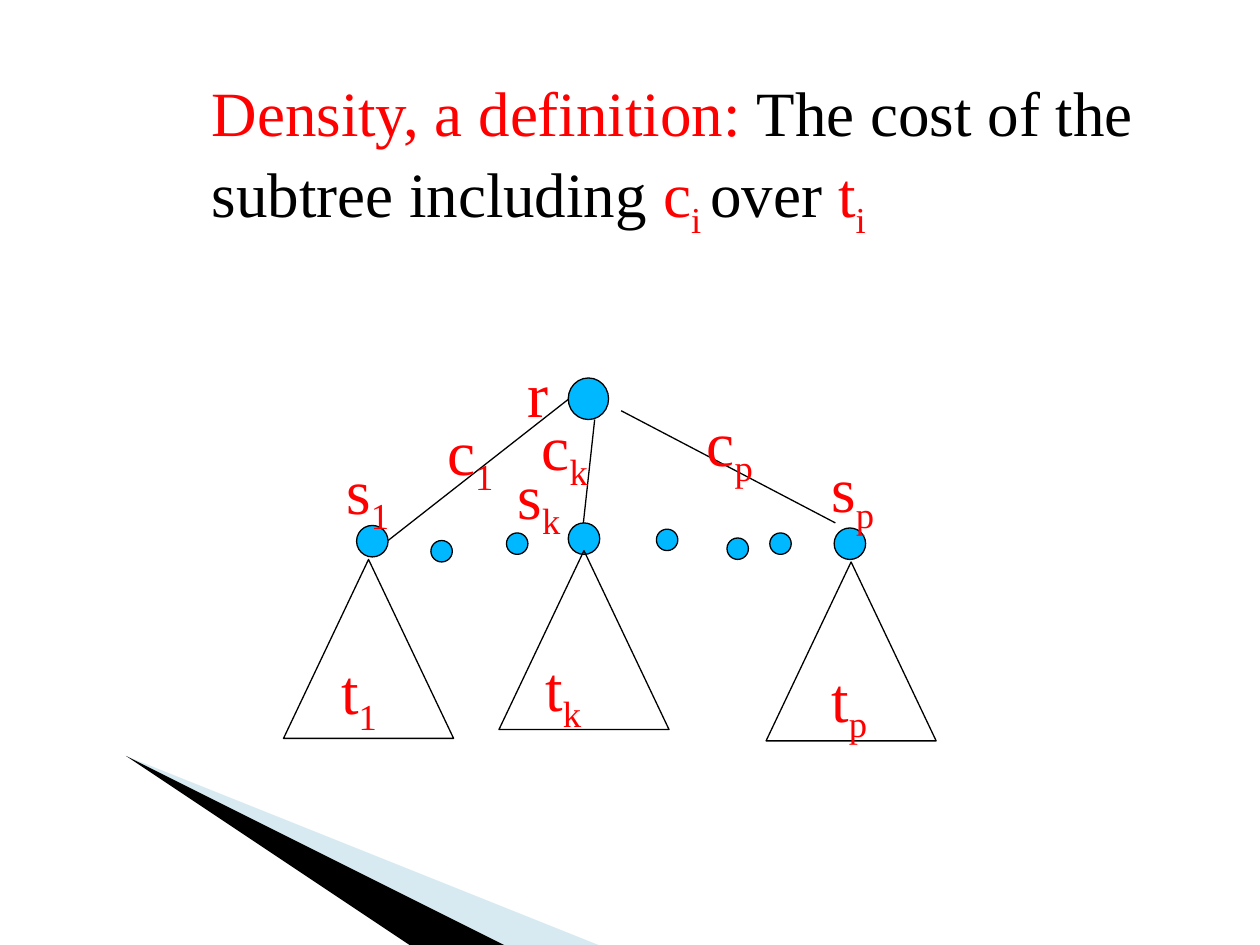
import pptx
import pptx.dml.color
import pptx.enum.shapes
import pptx.enum.text
import pptx.oxml
import pptx.oxml.ns
import pptx.util
from pptx.util import Inches

FONT = "Times New Roman"
RED, BLACK, BLUE, PALE = "FF0000", "000000", "00B8FF", "9FCBDC"
SHAPES = pptx.enum.shapes.MSO_SHAPE


def color(hex_string):
    """Return an RGB colour."""
    return pptx.dml.color.RGBColor.from_string(hex_string)


def style_line(line):
    """Give a line the thin black style of the diagram."""
    line.color.rgb = color(BLACK)
    line.width = pptx.util.Pt(0.75)


def write_runs(tf, runs):
    """Write (text, colour, is_subscript) runs into a text frame."""
    tf.word_wrap = True
    tf.auto_size = pptx.enum.text.MSO_AUTO_SIZE.NONE
    tf.vertical_anchor = pptx.enum.text.MSO_ANCHOR.TOP
    p = tf.paragraphs[0]
    p.alignment = pptx.enum.text.PP_ALIGN.LEFT
    p.line_spacing = 1.06
    for text, hex_string, is_subscript in runs:
        r = p.add_run()
        r.text = text
        r.font.name = FONT
        r.font.size = pptx.util.Pt(36)
        r.font.color.rgb = color(hex_string)
        if is_subscript:
            r.font._element.set("baseline", "-25000")


def add_wedge(s, points, hex_string, alpha=None):
    """Add a decorative wedge through the given points."""
    builder = s.shapes.build_freeform(*points[0], scale=Inches(1))
    builder.add_line_segments(points[1:], close=True)
    sp = builder.convert_to_shape()
    sp.shadow.inherit = False
    sp.fill.solid()
    sp.fill.fore_color.rgb = color(hex_string)
    sp.line.fill.background()
    if alpha is not None:
        rgb = sp._element.spPr.find(".//" + pptx.oxml.ns.qn("a:srgbClr"))
        rgb.append(pptx.oxml.parse_xml(
            f'<a:alpha {pptx.oxml.ns.nsdecls("a")} val="{alpha * 1000}"/>'))


def add_outlined(s, kind, x, y, w, h, fill=None):
    """Add an outlined preset shape with an optional fill."""
    sp = s.shapes.add_shape(kind, Inches(x), Inches(y), Inches(w), Inches(h))
    sp.shadow.inherit = False
    if fill:
        sp.fill.solid()
        sp.fill.fore_color.rgb = color(fill)
    else:
        sp.fill.background()
    style_line(sp.line)


def add_edge(s, x1, y1, x2, y2):
    """Add a straight tree edge."""
    c = s.shapes.add_connector(pptx.enum.shapes.MSO_CONNECTOR.STRAIGHT,
                               Inches(x1), Inches(y1), Inches(x2), Inches(y2))
    style_line(c.line)
    c._element.spPr.append(pptx.oxml.parse_xml(
        f'<a:effectLst {pptx.oxml.ns.nsdecls("a")}/>'))


def add_label(s, letter, index, x, y, w=1.5, h=0.78):
    """Add a red letter with an optional subscript index."""
    sp = s.shapes.add_textbox(Inches(x), Inches(y), Inches(w), Inches(h))
    runs = [(letter, RED, False)]
    if index:
        runs.append((index, RED, True))
    write_runs(sp.text_frame, runs)


def add_title(s):
    """Place the definition in the title placeholder."""
    sp = s.shapes.title
    sp.left, sp.top = Inches(1.58), Inches(0.5)
    sp.width, sp.height = Inches(7.58), Inches(1.99)
    write_runs(sp.text_frame, [
        ("Density, a definition: ", RED, False),
        ("The cost of the subtree including ", BLACK, False),
        ("c", RED, False), ("i ", RED, True),
        ("over ", BLACK, False),
        ("t", RED, False), ("i", RED, True)])


def add_tree(s):
    """Draw the root, its children, their subtrees and all labels."""
    add_outlined(s, SHAPES.OVAL, 4.51, 3, 0.32, 0.33, BLUE)
    for x, y in [(2.83, 4.17), (4.51, 4.15), (6.62, 4.19)]:
        add_outlined(s, SHAPES.OVAL, x, y, 0.25, 0.25, BLUE)
    for ends in [(4.51, 3.17, 3.08, 4.29), (4.72, 3.33, 4.63, 4.15),
                 (4.93, 3.26, 6.63, 4.15)]:
        add_edge(s, *ends)
    for x, y in [(3.42, 4.29), (4.02, 4.23), (5.21, 4.2), (5.77, 4.27), (6.11, 4.23)]:
        add_outlined(s, SHAPES.OVAL, x, y, 0.17, 0.17, BLUE)
    for x, y in [(2.25, 4.44), (3.96, 4.37), (6.08, 4.46)]:
        add_outlined(s, SHAPES.ISOSCELES_TRIANGLE, x, y, 1.35, 1.42)
    add_label(s, "r", "", 4.09, 2.73, 0.83, 0.7)
    labels = {"s": [(2.65, 3.49), (4.01, 3.53), (6.5, 3.48)],
              "t": [(2.61, 5.08), (4.23, 5.06), (6.5, 5.14)],
              "c": [(3.45, 3.18), (4.2, 3.14), (5.51, 3.11)]}
    for letter, places in labels.items():
        for index, (x, y) in zip("1kp", places):
            add_label(s, letter, index, x, y)


def main():
    """Build and save the slide."""
    prs = pptx.Presentation()
    prs.slide_width, prs.slide_height = Inches(10), Inches(7.5)
    s = prs.slides.add_slide(prs.slide_layouts[5])
    add_wedge(s, [(0.55, 6.5), (5.9, 7.5), (4.55, 7.5)], PALE, 40)
    add_wedge(s, [(0.53, 6.49), (4.53, 7.5), (3.67, 7.5)], BLACK)
    add_title(s)
    add_tree(s)
    prs.save("out.pptx")


if __name__ == "__main__":
    main()
